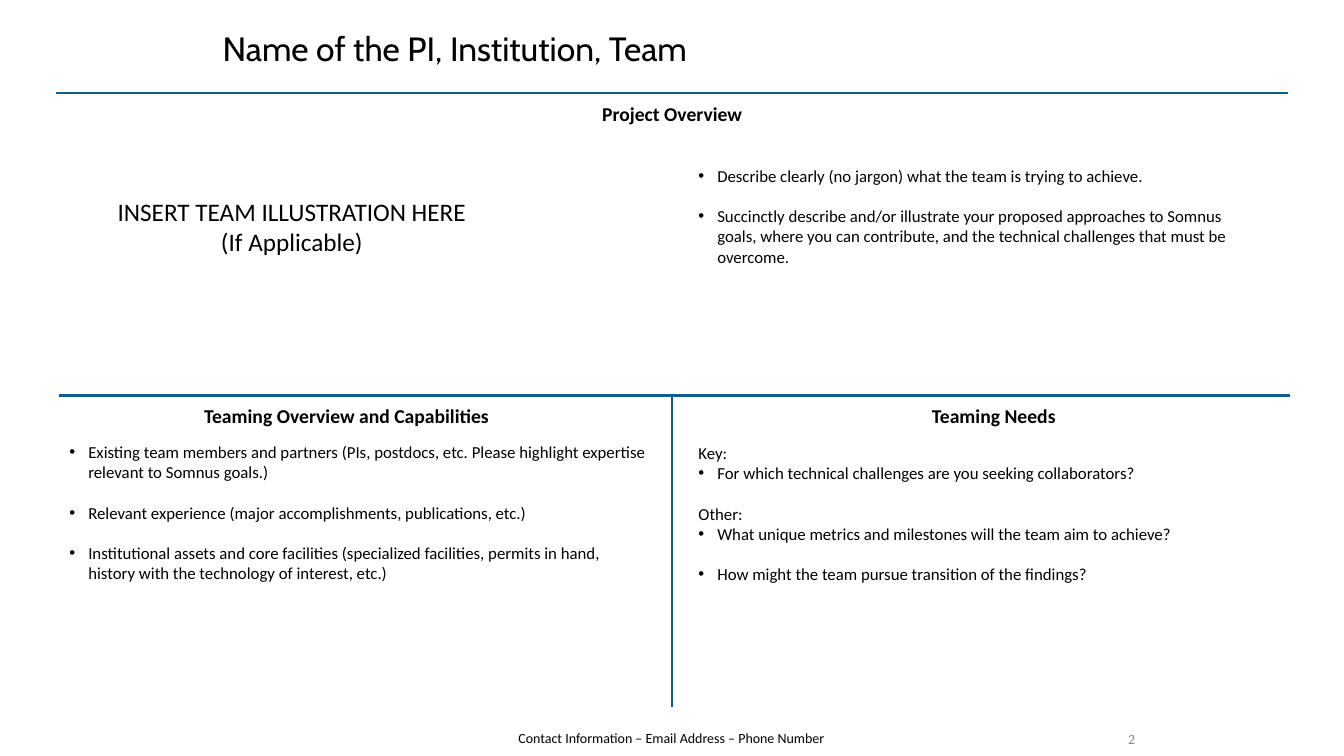
"""Build a one-page team profile slide with an overview and two teaming panels."""
from dataclasses import dataclass

from lxml import etree
from pptx import Presentation
from pptx.dml.color import RGBColor
from pptx.enum.shapes import MSO_CONNECTOR
from pptx.enum.text import MSO_ANCHOR, PP_ALIGN
from pptx.oxml.ns import qn
from pptx.util import Pt

STRAIGHT = MSO_CONNECTOR.STRAIGHT
TOP, MIDDLE = MSO_ANCHOR.TOP, MSO_ANCHOR.MIDDLE
LEFT, CENTER, RIGHT = PP_ALIGN.LEFT, PP_ALIGN.CENTER, PP_ALIGN.RIGHT


@dataclass(frozen=True)
class Theme:
    """Colours, fonts and type sizes of the slide."""

    ink: str = "000000"
    muted: str = "8C8C8C"
    rule: str = "0F5E90"
    title_font: str = "Cabin"
    body_font: str = "Calibri"
    title: float = 24
    prompt: float = 18
    heading: float = 14
    body: float = 12
    footer: float = 10
    rule_width: float = 1.75
    indent: float = 13.5
    gap: float = 14.65


THEME = Theme()


@dataclass(frozen=True)
class Line:
    """One paragraph, optionally bulleted or set apart from the one above."""

    text: str
    bullet: bool = False
    spaced: bool = False


@dataclass(frozen=True)
class Block:
    """A text box with its place in points and its style."""

    left: float
    top: float
    width: float
    height: float
    lines: tuple[Line, ...]
    size: float = THEME.body
    align: PP_ALIGN = LEFT
    anchor: MSO_ANCHOR = TOP
    font: str = THEME.body_font
    color: str = THEME.ink
    bold: bool = False
    line_spacing: float = 1.0


@dataclass(frozen=True)
class Rule:
    """A straight rule between two points."""

    x1: float
    y1: float
    x2: float
    y2: float


RULES = (
    Rule(40.3, 66.4, 920.2, 66.4),
    Rule(480, 282.4, 480, 504.7),
    Rule(42.5, 282.4, 921.6, 282.4),
)


def heading(text: str, left: float, top: float, width: float) -> Block:
    """Describe a bold centred section heading."""
    return Block(left, top, width, 24.5, (Line(text),), THEME.heading, CENTER, bold=True)


BLOCKS = (
    Block(151.9, 12.2, 562.3, 48.2, (Line("Name of the PI, Institution, Team"),),
          THEME.title, anchor=MIDDLE, font=THEME.title_font, line_spacing=0.9),
    heading("Project Overview", 300.2, 69.1, 360),
    heading("Teaming Overview and Capabilities", 102.2, 285.1, 290.9),
    heading("Teaming Needs", 564.5, 285.1, 290.9),
    Block(61.2, 136.8, 294.5, 51.1,
          (Line("INSERT TEAM ILLUSTRATION HERE"), Line("(If Applicable)")),
          THEME.prompt, CENTER),
    Block(491.8, 114.5, 407.5, 94.3, (
        Line("Describe clearly (no jargon) what the team is trying to achieve.", True),
        Line("Succinctly describe and/or illustrate your proposed approaches to Somnus "
             "goals, where you can contribute, and the technical challenges that must be "
             "overcome.", True, True),
    )),
    Block(42.5, 311.8, 426.2, 138.2, (
        Line("Existing team members and partners (PIs, postdocs, etc. Please highlight "
             "expertise relevant to Somnus goals.)", True),
        Line("Relevant experience (major accomplishments, publications, etc.)", True, True),
        Line("Institutional assets and core facilities (specialized facilities, permits "
             "in hand, history with the technology of interest, etc.)", True, True),
    )),
    Block(491.8, 312.5, 430.6, 108.7, (
        Line("Key:"),
        Line("For which technical challenges are you seeking collaborators?", True),
        Line("Other:", spaced=True),
        Line("What unique metrics and milestones will the team aim to achieve?", True),
        Line("How might the team pursue transition of the findings?", True, True),
    )),
    Block(224.6, 515.5, 509.8, 23.8,
          (Line("Contact Information – Email Address – Phone Number"),),
          THEME.footer, CENTER, MIDDLE),
    Block(758.2, 516.2, 59.8, 23, (Line("2"),),
          THEME.footer, RIGHT, MIDDLE, color=THEME.muted),
)


def add_bullet(para) -> None:
    """Give a paragraph a round bullet with a hanging indent."""
    properties = para._p.get_or_add_pPr()
    properties.set("marL", str(Pt(THEME.indent)))
    properties.set("indent", str(-Pt(THEME.indent)))
    etree.SubElement(properties, qn("a:buFont")).set("typeface", "Arial")
    etree.SubElement(properties, qn("a:buChar")).set("char", "•")


def draw_block(page, block: Block) -> None:
    """Draw a text box and format its paragraphs."""
    box = page.shapes.add_textbox(
        Pt(block.left), Pt(block.top), Pt(block.width), Pt(block.height))
    frame = box.text_frame
    frame.word_wrap = True
    frame.vertical_anchor = block.anchor
    frame.text = "\n".join(line.text for line in block.lines)
    for para, line in zip(frame.paragraphs, block.lines):
        if line.bullet:
            add_bullet(para)
        para.alignment = block.align
        para.line_spacing = block.line_spacing
        if line.spaced:
            para.space_before = Pt(THEME.gap)
        for span in para.runs:
            span.font.name = block.font
            span.font.size = Pt(block.size)
            span.font.bold = block.bold
            span.font.color.rgb = RGBColor.from_string(block.color)


def draw_rule(page, rule: Rule) -> None:
    """Draw a rule without a shadow."""
    connector = page.shapes.add_connector(
        STRAIGHT, Pt(rule.x1), Pt(rule.y1), Pt(rule.x2), Pt(rule.y2))
    connector.line.color.rgb = RGBColor.from_string(THEME.rule)
    connector.line.width = Pt(THEME.rule_width)
    etree.SubElement(connector._element.spPr, qn("a:effectLst"))


def main() -> None:
    """Build the deck and save it."""
    deck = Presentation()
    deck.slide_width, deck.slide_height = Pt(960), Pt(540)
    page = deck.slides.add_slide(deck.slide_layouts[6])
    for rule in RULES:
        draw_rule(page, rule)
    for block in BLOCKS:
        draw_block(page, block)
    deck.save("out.pptx")


if __name__ == "__main__":
    main()
